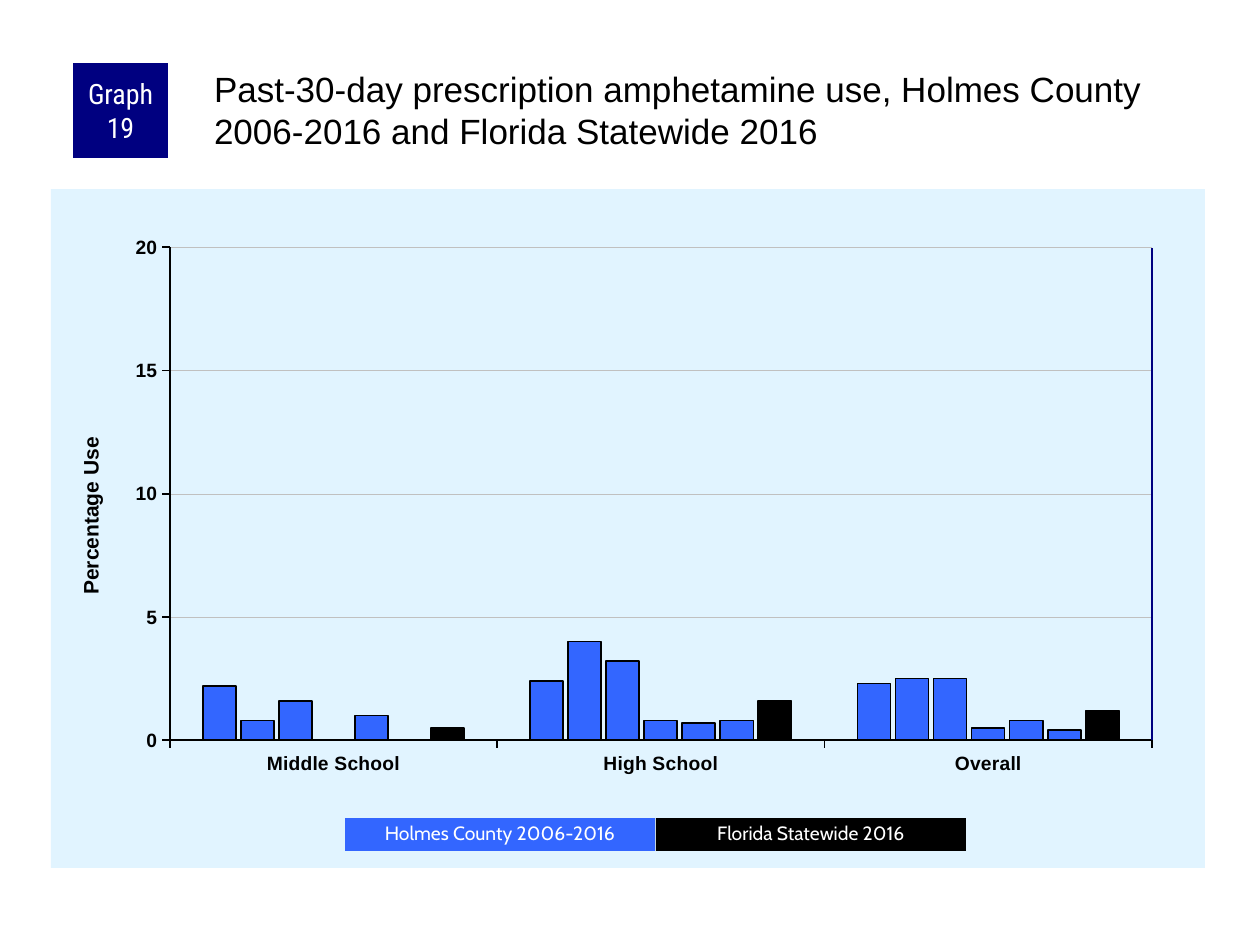
from dataclasses import dataclass
from lxml import etree
from pptx import Presentation
from pptx.chart.data import CategoryChartData
from pptx.dml.color import RGBColor
from pptx.enum.chart import XL_CHART_TYPE, XL_TICK_MARK
from pptx.enum.shapes import MSO_CONNECTOR, MSO_SHAPE
from pptx.enum.text import MSO_ANCHOR, MSO_AUTO_SIZE, PP_ALIGN
from pptx.oxml import parse_xml
from pptx.oxml.ns import qn
from pptx.util import Pt

COLUMN = XL_CHART_TYPE.COLUMN_CLUSTERED
OUT = XL_TICK_MARK.OUTSIDE
RECT = MSO_SHAPE.RECTANGLE
LINE = MSO_CONNECTOR.STRAIGHT
TOP, MIDDLE = MSO_ANCHOR.TOP, MSO_ANCHOR.MIDDLE
LEFT, CENTER = PP_ALIGN.LEFT, PP_ALIGN.CENTER
FIXED = MSO_AUTO_SIZE.NONE
TITLE_ONLY = 5
SCALE = 914400 / 126
NS = "http://schemas.openxmlformats.org/drawingml/2006/chart"


@dataclass(frozen=True)
class Theme:
    ink: str = "000000"
    paper: str = "FFFFFF"
    navy: str = "000080"
    blue: str = "3366FF"
    pale: str = "E1F4FF"
    grid: str = "C0C0C0"
    font: str = "Arial"
    badge_font: str = "Roboto Condensed"
    key_font: str = "Cabin"
    title: int = 20
    badge: int = 16
    name: int = 12
    label: int = 11
    base: int = 8


THEME = Theme()
GROUPS = ["Middle School", "High School", "Overall"]
SERIES = [
    (2.2, 2.4, 2.3),
    (0.8, 4, 2.5),
    (1.6, 3.2, 2.5),
    (0, 0.8, 0.5),
    (1, 0.7, 0.8),
    (0, 0.8, 0.4),
    (0.5, 1.6, 1.2),
]


def px(n):
    return round(n * SCALE)


def color(code):
    return RGBColor.from_string(code)


def style(font, face, size, code, bold=False):
    font.name, font.size, font.bold = face, Pt(size), bold
    font.color.rgb = color(code)


def stroke(line, code, width):
    line.color.rgb = color(code)
    line.width = Pt(width)


def paint(part, code):
    xml = ('<c:spPr xmlns:c="%s" xmlns:a="http://schemas.openxmlformats.org/'
           'drawingml/2006/main"><a:solidFill><a:srgbClr val="%s"/>'
           '</a:solidFill><a:ln><a:noFill/></a:ln></c:spPr>')
    part.find(qn("c:chart")).addnext(parse_xml(xml % (NS, code)))


def place(part, inner=False, **spots):
    old = part.find(qn("c:layout"))
    if old is not None:
        part.remove(old)
    box = etree.Element(qn("c:layout"))
    man = etree.SubElement(box, qn("c:manualLayout"))
    if inner:
        etree.SubElement(man, qn("c:layoutTarget")).set("val", "inner")
    for key in ("xMode", "yMode"):
        etree.SubElement(man, qn("c:" + key)).set("val", "edge")
    for key, val in spots.items():
        etree.SubElement(man, qn("c:" + key)).set("val", str(val))
    text = part.find(qn("c:tx"))
    if text is None:
        part.insert(0, box)
    else:
        text.addnext(box)


def add_title(slide, text):
    head = slide.shapes.title
    head.left, head.top, head.width, head.height = map(px, (210, 63, 998, 105))
    frame = head.text_frame
    frame.text = text
    frame.word_wrap, frame.auto_size = True, FIXED
    frame.vertical_anchor = TOP
    frame.margin_left = frame.margin_top = px(4)
    frame.margin_right = frame.margin_bottom = 0
    line = frame.paragraphs[0]
    line.alignment = LEFT
    style(line.runs[0].font, THEME.font, THEME.title, THEME.ink)


def add_box(slide, box, text, fill, face, size, space=1.0):
    shape = slide.shapes.add_shape(RECT, *map(px, box))
    shape.shadow.inherit = False
    shape.fill.solid()
    shape.fill.fore_color.rgb = color(fill)
    shape.line.fill.background()
    frame = shape.text_frame
    frame.text = text
    frame.word_wrap, frame.vertical_anchor = True, MIDDLE
    frame.margin_left = frame.margin_right = px(6)
    frame.margin_top = frame.margin_bottom = 0
    line = frame.paragraphs[0]
    line.alignment, line.line_spacing = CENTER, space
    style(line.runs[0].font, face, size, THEME.paper)


def add_rule(slide, ends, code, width):
    rule = slide.shapes.add_connector(LINE, *map(px, ends))
    stroke(rule.line, code, width)
    etree.SubElement(rule.element.spPr, qn("a:effectLst"))


def set_axis(axis):
    axis.major_tick_mark = OUT
    stroke(axis.format.line, THEME.ink, 1)
    style(axis.tick_labels.font, THEME.font, THEME.label, THEME.ink, True)


def set_scale(axis):
    axis.minimum_scale, axis.maximum_scale, axis.major_unit = 0, 20, 5
    axis.has_major_gridlines = True
    stroke(axis.major_gridlines.format.line, THEME.grid, 0.25)
    axis.tick_labels.number_format = "0"
    axis.tick_labels.number_format_is_linked = False
    title = axis.axis_title
    title.text_frame.text = "Percentage Use"
    run = title.text_frame.paragraphs[0].runs[0]
    style(run.font, THEME.font, THEME.name, THEME.ink, True)
    place(title._element, x=0.02, y=0.36)


def add_bars(slide):
    data = CategoryChartData()
    data.categories = GROUPS
    for n, vals in enumerate(SERIES, 1):
        data.add_series(f"Series {n}", vals)
    box = map(px, (51, 189, 1154, 679))
    chart = slide.shapes.add_chart(COLUMN, *box, data).chart
    chart.has_legend = chart.has_title = False
    style(chart.font, THEME.font, THEME.base, THEME.ink)
    paint(chart._chartSpace, THEME.pale)
    place(chart._chartSpace.chart.plotArea, True,
          x=0.103, y=0.086, w=0.851, h=0.726)
    plot = chart.plots[0]
    plot.gap_width, plot.overlap = 200, -15
    plot.vary_by_categories = False
    last = len(SERIES) - 1
    for n, bar in enumerate(plot.series):
        bar.format.fill.solid()
        code = THEME.ink if n == last else THEME.blue
        bar.format.fill.fore_color.rgb = color(code)
        stroke(bar.format.line, THEME.ink, 1)
    set_axis(chart.category_axis)
    set_axis(chart.value_axis)
    set_scale(chart.value_axis)


def main():
    deck = Presentation()
    deck.slide_width, deck.slide_height = px(1260), px(945)
    slide = deck.slides.add_slide(deck.slide_layouts[TITLE_ONLY])
    add_bars(slide)
    add_rule(slide, (1152, 248, 1152, 740), THEME.navy, 1)
    add_box(slide, (73, 63, 95, 95), "Graph 19", THEME.navy,
            THEME.badge_font, THEME.badge)
    add_title(slide, "Past-30-day prescription amphetamine use, "
              "Holmes County 2006-2016 and Florida Statewide 2016")
    keys = [("Holmes County 2006-2016", THEME.blue),
            ("Florida Statewide 2016", THEME.ink)]
    for n, (text, fill) in enumerate(keys):
        add_box(slide, (345 + n * 311, 818, 310, 33), text, fill,
                THEME.key_font, THEME.label, 0.9)
    deck.save("out.pptx")


if __name__ == "__main__":
    main()
